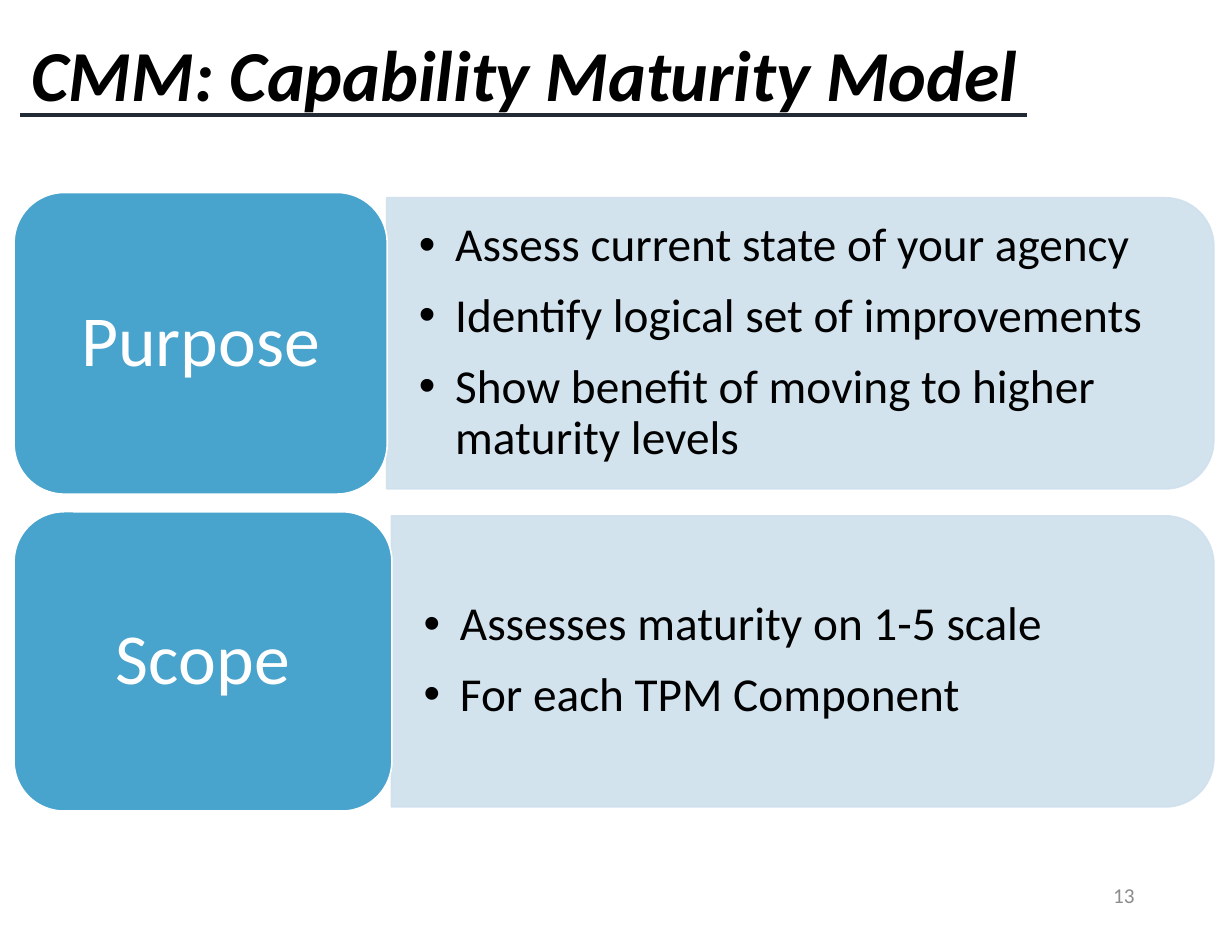
from lxml import etree
from pptx import Presentation
from pptx import util as u
from pptx.dml.color import RGBColor
from pptx.enum import shapes, text
from pptx.oxml import ns

PX = 9144  # EMU per px, 100 px to the inch
COLORS = {"ink": "000000", "rule": "222A35", "card": "48A3CD",
          "panel": "CFE0ED", "white": "FFFFFF", "number": "8C8C8C"}
SECTIONS = [
    # heading, card top, card width, card height, bullets
    ("Purpose", 164, 318, 257, ["Assess current state of your agency",
                                "Identify logical set of improvements",
                                "Show benefit of moving to higher maturity levels"]),
    ("Scope", 436, 322, 255, ["Assesses maturity on 1-5 scale",
                              "For each TPM Component"]),
]
CARD_LEFT, PANEL_RIGHT, PANEL_HEIGHT = 12, 1035, 248


def px(*lengths):
    return [u.Emu(length * PX) for length in lengths]


def color(name):
    return RGBColor.from_string(COLORS[name])


class SlideBuilder:
    font = "Calibri"

    def __init__(self, page):
        self.page = page

    def fill_text(self, box, lines, size, ink, insets=(11, 5), align=text.PP_ALIGN.LEFT,
                  anchor=text.MSO_ANCHOR.MIDDLE, spacing=0.9, after=0, bullets=False,
                  strong=False):
        frame = box.text_frame
        frame.word_wrap = True
        frame.vertical_anchor = anchor
        frame.margin_left, frame.margin_top = px(*insets)
        frame.margin_right, frame.margin_bottom = px(*insets)
        frame.text = "\n".join(lines)
        for para in frame.paragraphs:
            para.alignment = align
            para.line_spacing = spacing
            para.space_after = u.Pt(after)
            if bullets:
                self.add_bullet(para)
            for span in para.runs:
                span.font.name = self.font
                span.font.size = u.Pt(size)
                span.font.color.rgb = color(ink)
                span.font.bold = span.font.italic = strong

    def add_bullet(self, para):
        props = para._p.get_or_add_pPr()
        indent = 31 * PX
        props.set("marL", str(indent))
        props.set("indent", str(-indent))
        etree.SubElement(props, ns.qn("a:buFont")).set("typeface", "Arial")
        etree.SubElement(props, ns.qn("a:buChar")).set("char", "•")

    def textbox(self, left, top, width, height, lines, size, ink, **style):
        box = self.page.shapes.add_textbox(*px(left, top, width, height))
        self.fill_text(box, lines, size, ink, **style)

    def shape(self, kind, left, top, width, height, fill, line):
        shape = self.page.shapes.add_shape(kind, *px(left, top, width, height))
        shape.shadow.inherit = False
        shape.fill.solid()
        shape.fill.fore_color.rgb = color(fill)
        shape.line.color.rgb = color(line)
        shape.line.width = u.Pt(1)
        return shape

    def card(self, left, top, width, height, heading):
        card = self.shape(shapes.MSO_SHAPE.ROUNDED_RECTANGLE, left, top, width, height,
                          "card", "white")
        self.fill_text(card, [heading], 44, "white", insets=(18, 9), align=text.PP_ALIGN.CENTER)

    def panel(self, left, top, width, height, lines):
        # A quarter turn puts the two rounded corners on the right
        shift = (width - height) // 2
        panel = self.shape(shapes.MSO_SHAPE.ROUND_2_SAME_RECTANGLE, left + shift, top - shift,
                           height, width, "panel", "panel")
        panel.rotation = 90
        for tint in panel._element.spPr.iter(ns.qn("a:srgbClr")):
            etree.SubElement(tint, ns.qn("a:alpha")).set("val", "90000")
        self.textbox(left, top + 12, width - 12, height - 24, lines, 29, "ink",
                     insets=(27, 14), after=12, bullets=True)

    def rule(self, left, top, right):
        line = self.page.shapes.add_connector(shapes.MSO_CONNECTOR.STRAIGHT,
                                              *px(left, top, right, top))
        line.line.color.rgb = color("rule")
        line.line.width = u.Pt(2)
        etree.SubElement(line._element.spPr, ns.qn("a:effectLst"))


def main():
    deck = Presentation()
    deck.slide_width, deck.slide_height = px(1050, 800)
    slide = SlideBuilder(deck.slides.add_slide(deck.slide_layouts[6]))

    # Title, its underline and the page number
    slide.rule(17, 98, 875)
    slide.textbox(16, 29, 906, 62, ["CMM: Capability Maturity Model"], 44, "ink",
                  anchor=text.MSO_ANCHOR.TOP, strong=True)
    slide.textbox(742, 741, 236, 43, ["13"], 13, "number",
                  align=text.PP_ALIGN.RIGHT, spacing=1.0)

    # Sections: a panel of bullets beside a heading card
    for heading, top, width, height, bullets in SECTIONS:
        panel_left = CARD_LEFT + width
        panel_top = top + (height - PANEL_HEIGHT) // 2
        slide.panel(panel_left, panel_top, PANEL_RIGHT - panel_left, PANEL_HEIGHT, bullets)
        slide.card(CARD_LEFT, top, width, height, heading)

    deck.save("out.pptx")


if __name__ == "__main__":
    main()
